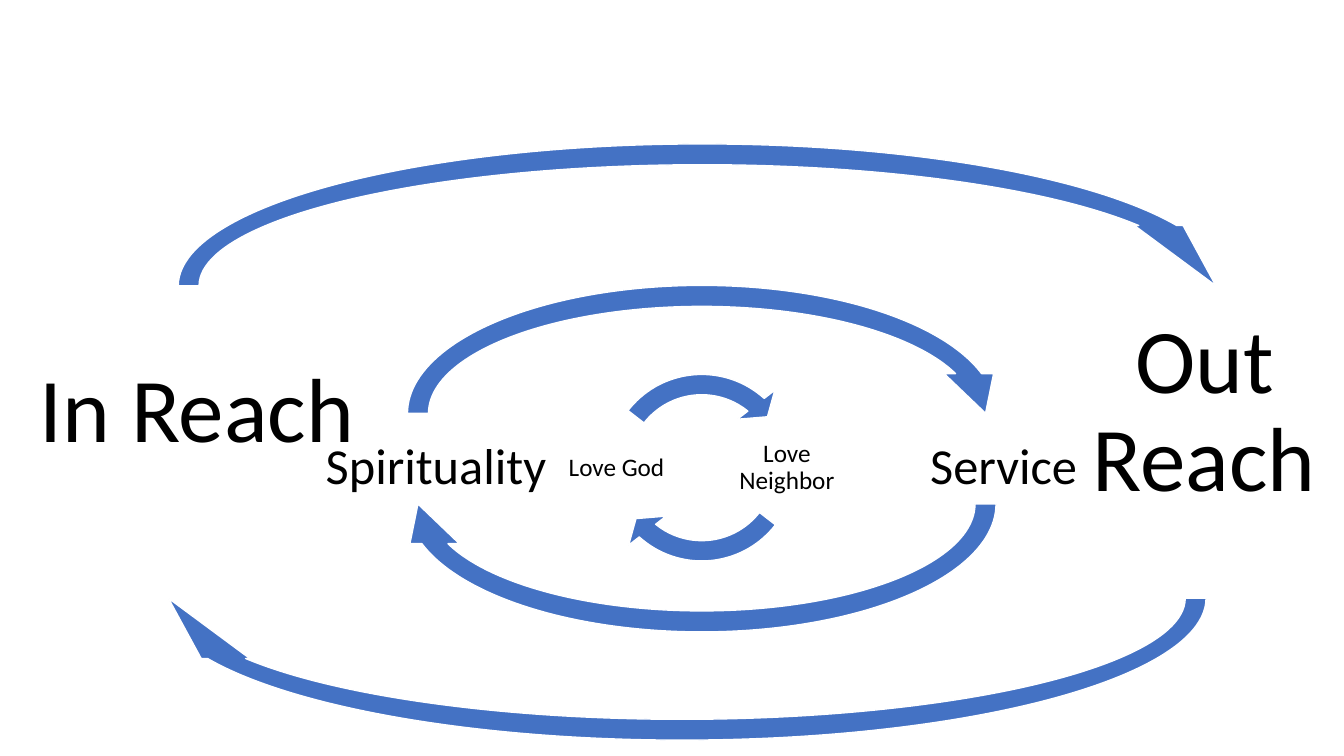
from pptx import Presentation
from pptx.dml.color import RGBColor
from pptx.enum.shapes import MSO_SHAPE
from pptx.enum.text import MSO_ANCHOR, PP_ALIGN
from pptx.util import Inches, Pt

CIRCULAR_ARROW = MSO_SHAPE.CIRCULAR_ARROW
MIDDLE = MSO_ANCHOR.MIDDLE
CENTER = PP_ALIGN.CENTER
BLUE = RGBColor(0x44, 0x72, 0xC4)
WHITE = RGBColor(0xFF, 0xFF, 0xFF)
BLACK = RGBColor(0x00, 0x00, 0x00)
FONT = "Calibri"
HALF_TURN = 108

LOVE_SIZE = (2.12, 2.12)
SERVICE_SIZE = (6.12, 2.82)
REACH_SIZE = (10.67, 3.09)
SERVICE_BEND = (0.074, 5.07, 102.93, 2 * HALF_TURN, 0.087)
REACH_BEND = (0.067, 4.51, 103.49, 0, 0.078)


class CycleSlide:
    """Draws the labels and curved arrows of nested cycles on one slide."""

    def __init__(self, presentation):
        self.slide = presentation.slides.add_slide(presentation.slide_layouts[6])

    def label(self, text, left, top, side, size, inset):
        box = self.slide.shapes.add_textbox(
            Inches(left), Inches(top), Inches(side), Inches(side))
        frame = box.text_frame
        frame.word_wrap = True
        frame.vertical_anchor = MIDDLE
        frame.margin_left = frame.margin_right = Inches(inset)
        frame.margin_top = frame.margin_bottom = Inches(inset)
        paragraph = frame.paragraphs[0]
        paragraph.text = text
        paragraph.alignment = CENTER
        paragraph.line_spacing = 0.9
        paragraph.font.name = FONT
        paragraph.font.size = Pt(size)
        paragraph.font.color.rgb = BLACK

    def arrow(self, left, top, size, bend, rotation=0):
        width, height = size
        shape = self.slide.shapes.add_shape(
            CIRCULAR_ARROW, Inches(left), Inches(top), Inches(width), Inches(height))
        for index, value in enumerate(bend):
            shape.adjustments[index] = value
        shape.rotation = rotation
        shape.shadow.inherit = False
        shape.fill.solid()
        shape.fill.fore_color.rgb = BLUE
        shape.line.color.rgb = WHITE
        shape.line.width = Pt(1)


def main():
    presentation = Presentation()
    presentation.slide_width = Inches(13.33)
    presentation.slide_height = Inches(7.5)
    cycle = CycleSlide(presentation)

    for text, left, turn in (("Love Neighbor", 7.29, 0), ("Love God", 5.6, HALF_TURN)):
        cycle.label(text, left, 4.13, 1.03, 18, 0.03)
        bend = (0.095, 6.86, 78.47 + turn, 22.67 + turn, 0.111)
        cycle.arrow(5.9, 3.58, LOVE_SIZE, bend)

    for text, left in (("Out Reach", 10.11), ("In Reach", 0.12)):
        cycle.label(text, left, 2.26, 3.67, 65, 0.09)
    for text, left in (("Service", 8.79), ("Spirituality", 3.16)):
        cycle.label(text, left, 3.48, 2.33, 36, 0.05)

    cycle.arrow(1.43, 4.39, REACH_SIZE, REACH_BEND)
    cycle.arrow(3.9, 3.59, SERVICE_SIZE, SERVICE_BEND)
    cycle.arrow(3.9, 2.69, SERVICE_SIZE, SERVICE_BEND, 180)
    cycle.arrow(1.63, 1.29, REACH_SIZE, REACH_BEND, 180)

    presentation.save("out.pptx")


if __name__ == "__main__":
    main()
